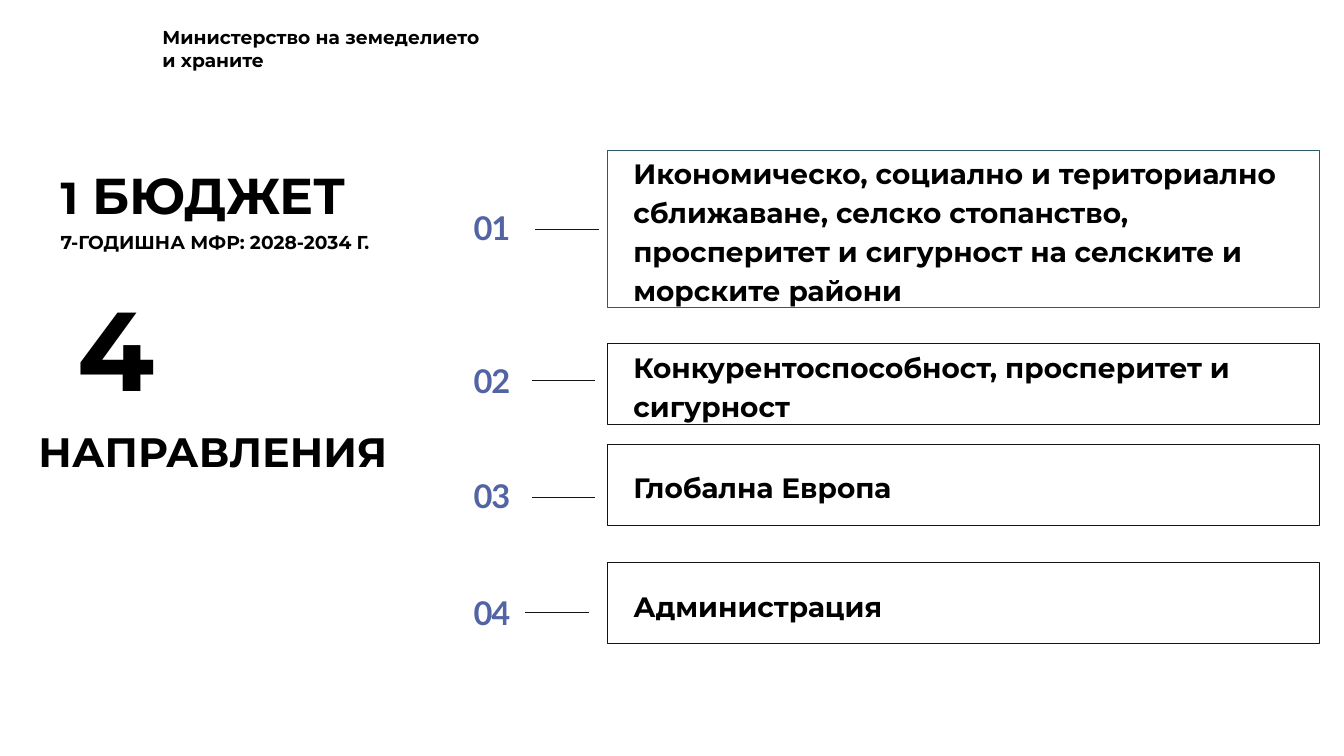
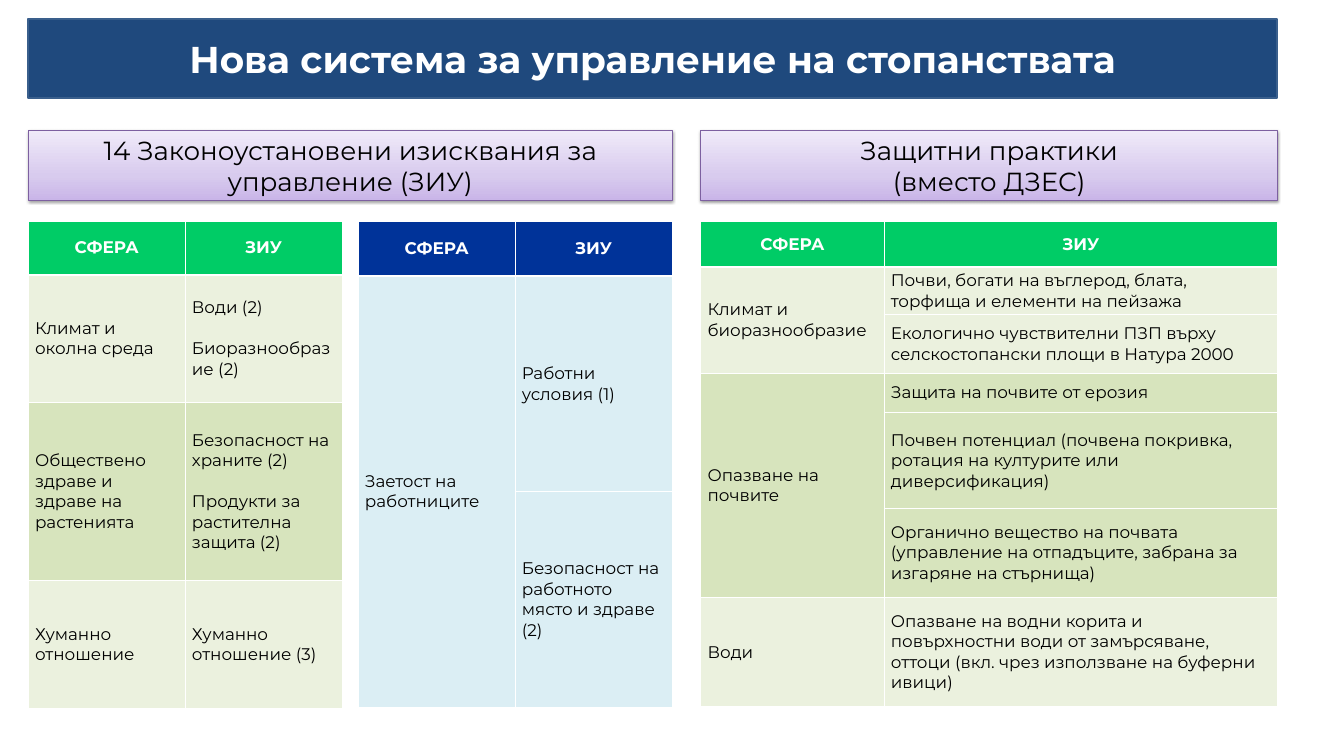
"""Builds two slides: the budget directions and the new farm management system."""
import copy

import lxml.etree
import pptx
import pptx.dml.color
import pptx.enum.shapes
import pptx.enum.text
import pptx.oxml.ns
import pptx.util

Cm, Pt, qn = pptx.util.Cm, pptx.util.Pt, pptx.oxml.ns.qn
RECT = pptx.enum.shapes.MSO_SHAPE.RECTANGLE
STRAIGHT = pptx.enum.shapes.MSO_CONNECTOR.STRAIGHT
CENTER = pptx.enum.text.PP_ALIGN.CENTER
LEFT = pptx.enum.text.PP_ALIGN.LEFT
MIDDLE = pptx.enum.text.MSO_ANCHOR.MIDDLE

FONT, NUMBER_FONT = "Montserrat", "Lato"
BLACK, WHITE, INK, TEAL, INDIGO = "000000", "FFFFFF", "141414", "2B5C6D", "5264A3"
NAVY, NAVY_EDGE, PURPLE = "1F497D", "3A5F8C", "7D60A0"
GREEN, BLUE, PALE, OLIVE, SKY = "00CC66", "003399", "EBF1DE", "D7E4BD", "DBEEF4"
LILAC_STOPS = [(0, "C9B5E8"), (0.35, "D8CBEE"), (1, "F0EAF9")]

MINISTRY = "Министерство на земеделието и храните"
MINISTRY_BOX = (5.89, 0.86, 12.83, 1.96)
HEADLINES = [
    ((2.29, 6.1, 14.17, 2.29), 67.5, [("1", 48), (" БЮДЖЕТ", 54)]),
    ((2.29, 8.74, 13.84, 0.86), 24, [("7-ГОДИШНА МФР: 2028-2034 Г.", 20)]),
    ((2.92, 10.57, 17.98, 5.08), 144, [("4", 120)]),
    ((1.45, 15.62, 17.98, 2.24), 66.6, [("НАПРАВЛЕНИЯ", 44)]),
]
FRAME_LEFT, FRAME_WIDTH, NUMBER_LEFT, DASH_WIDTH = 22.94, 26.92, 17.9, 2.4
DIRECTIONS = [
    {"text": "Икономическо, социално и териториално сближаване, селско стопанство, "
             "просперитет и сигурност на селските и морските райони",
     "top": 5.69, "height": 5.94, "color": TEAL, "number_top": 7.85, "dash": (20.24, 8.66)},
    {"text": "Конкурентоспособност, просперитет и сигурност",
     "top": 12.98, "height": 3.08, "color": INK, "number_top": 13.64, "dash": (20.1, 14.39)},
    {"text": "Глобална Европа",
     "top": 16.79, "height": 3.08, "color": INK, "number_top": 17.98, "dash": (20.1, 18.81)},
    {"text": "Администрация",
     "top": 21.26, "height": 3.08, "color": INK, "number_top": 22.4, "dash": (19.86, 23.15)},
]

TITLE = "Нова система за управление на стопанствата"
TITLE_BOX = (1.07, 0.71, 47.19, 3)
SECTION_TOP, SECTION_HEIGHT, TABLE_TOP = 4.93, 2.64, 8.36
SECTIONS = [
    (1.07, 24.33, ["14 Законоустановени изисквания за управление (ЗИУ)"]),
    (26.49, 21.79, ["Защитни практики", "(вместо ДЗЕС)"]),
]
HEADER = ["СФЕРА", "ЗИУ"]
TABLES = [
    {"left": 1.07, "cols": [5.93, 5.93], "header": (2.03, GREEN), "rows": [
        (4.83, PALE, "Климат и околна среда", ["Води (2)", "Биоразнообразие (2)"]),
        (6.73, OLIVE, "Обществено здраве и здраве на растенията",
         ["Безопасност на храните (2)", "Продукти за растителна защита (2)"]),
        (4.83, PALE, "Хуманно отношение", ["Хуманно отношение (3)"]),
    ]},
    {"left": 13.54, "cols": [5.93, 5.93], "header": (2.08, BLUE), "rows": [
        (8.15, SKY, "Заетост на работниците", ["Работни условия (1)"]),
        (8.15, SKY, None, ["Безопасност на работното място и здраве (2)"]),
    ]},
    {"left": 26.49, "cols": [6.93, 14.86], "header": (1.73, GREEN), "rows": [
        (1.7, PALE, "Климат и биоразнообразие",
         ["Почви, богати на въглерод, блата, торфища и елементи на пейзажа"]),
        (2.21, PALE, None,
         ["Екологично чувствителни ПЗП върху селскостопански площи в Натура 2000"]),
        (1.5, OLIVE, "Опазване на почвите", ["Защита на почвите от ерозия"]),
        (3.61, OLIVE, None,
         ["Почвен потенциал (почвена покривка, ротация на културите или диверсификация)"]),
        (3.38, OLIVE, None,
         ["Органично вещество на почвата (управление на отпадъците, "
          "забрана за изгаряне на стърнища)"]),
        (4.11, PALE, "Води",
         ["Опазване на водни корита и повърхностни води от замърсяване, оттоци "
          "(вкл. чрез използване на буферни ивици)"]),
    ]},
]


def rgb(color):
    return pptx.dml.color.RGBColor.from_string(color)


def cm(values):
    return [Cm(v) for v in values]


def put(obj, values):
    for name, value in values.items():
        setattr(obj, name, value)


def write(tf, lines, color=BLACK, bold=False, font=FONT, align=LEFT, spacing=None, gap=0):
    for i, runs in enumerate(lines):
        p = tf.add_paragraph() if i else tf.paragraphs[0]
        put(p, {"alignment": align, "space_before": Pt(gap if i else 0)})
        if spacing:
            p.line_spacing = Pt(spacing)
        for text, size in runs:
            r = p.add_run()
            r.text = text
            put(r.font, {"name": font, "size": Pt(size), "bold": bold})
            r.font.color.rgb = rgb(color)


def add_text(slide, box, lines, inset=True, wrap=True, **style):
    tf = slide.shapes.add_textbox(*cm(box)).text_frame
    tf.word_wrap = wrap
    if not inset:
        put(tf, dict.fromkeys(["margin_left", "margin_top", "margin_right", "margin_bottom"], 0))
    write(tf, lines, **style)
    return tf


def add_box(slide, box, line, width, fill=None):
    sp = slide.shapes.add_shape(RECT, *cm(box))
    sp.shadow.inherit = False
    if fill:
        sp.fill.solid()
        sp.fill.fore_color.rgb = rgb(fill)
    else:
        sp.fill.background()
    sp.line.color.rgb = rgb(line)
    sp.line.width = Pt(width)
    sp.text_frame.vertical_anchor = MIDDLE
    return sp


def add_dash(slide, x, y):
    line = slide.shapes.add_connector(STRAIGHT, *cm((x, y, x + DASH_WIDTH, y)))
    line.line.color.rgb = rgb(INK)
    line.line.width = Pt(0.75)
    lxml.etree.SubElement(line._element.spPr, qn("a:effectLst"))


def add_section(slide, left, width, lines):
    sp = add_box(slide, (left, SECTION_TOP, width, SECTION_HEIGHT), PURPLE, 0.75)
    sp.fill.gradient()
    sp.fill.gradient_angle = 90
    stops = sp._element.spPr.find(".//" + qn("a:gsLst"))
    stops.append(copy.deepcopy(stops[-1]))
    for stop, (position, color) in zip(sp.fill.gradient_stops, LILAC_STOPS):
        stop.position = position
        stop.color.rgb = rgb(color)
    effects = sp._element.spPr.find(qn("a:effectLst"))
    shadow = lxml.etree.SubElement(effects, qn("a:outerShdw"), blurRad=str(Pt(3.1)),
                                   dist=str(Pt(1.6)), dir="5400000", rotWithShape="0")
    tone = lxml.etree.SubElement(shadow, qn("a:srgbClr"), val=BLACK)
    lxml.etree.SubElement(tone, qn("a:alpha"), val="38000")
    write(sp.text_frame, [[(text, 28)] for text in lines], align=CENTER)


def fill_cell(cell, fill, lines, bottom=1, **style):
    tc_pr = cell._tc.get_or_add_tcPr()
    for side, width in (("L", 1), ("R", 1), ("T", 1), ("B", bottom)):
        ln = lxml.etree.SubElement(tc_pr, qn("a:ln" + side), w=str(Pt(width)))
        solid = lxml.etree.SubElement(ln, qn("a:solidFill"))
        lxml.etree.SubElement(solid, qn("a:srgbClr"), val=WHITE)
    cell.fill.solid()
    cell.fill.fore_color.rgb = rgb(fill)
    cell.vertical_anchor = MIDDLE
    write(cell.text_frame, [[(text, 18)] for text in lines], **style)


def add_grid(slide, spec):
    header_height, header_fill = spec["header"]
    heights = [header_height] + [row[0] for row in spec["rows"]]
    box = (spec["left"], TABLE_TOP, sum(spec["cols"]), sum(heights))
    table = slide.shapes.add_table(len(heights), len(HEADER), *cm(box)).table
    table.horz_banding = False
    for col, width in zip(table.columns, spec["cols"]):
        col.width = Cm(width)
    for row, height in zip(table.rows, heights):
        row.height = Cm(height)
    for c, text in enumerate(HEADER):
        fill_cell(table.cell(0, c), header_fill, [text], bottom=3,
                  color=WHITE, bold=True, align=CENTER)
    first = 1
    for r, (_, fill, area, rules) in enumerate(spec["rows"], 1):
        fill_cell(table.cell(r, 0), fill, [area] if area else [])
        fill_cell(table.cell(r, 1), fill, rules, gap=22)
        if area:
            first = r
        if r == len(spec["rows"]) or spec["rows"][r][2]:
            if r > first:
                table.cell(first, 0).merge(table.cell(r, 0))


def build_directions(slide):
    add_text(slide, MINISTRY_BOX, [[(MINISTRY, 20)]], bold=True)
    for box, spacing, runs in HEADLINES:
        add_text(slide, box, [runs], inset=False, bold=True, spacing=spacing)
    for number, d in enumerate(DIRECTIONS, 1):
        frame = add_box(slide, (FRAME_LEFT, d["top"], FRAME_WIDTH, d["height"]), d["color"], 0.75)
        put(frame.text_frame, {"margin_left": Cm(1), "margin_right": 0,
                               "margin_top": 0, "margin_bottom": 0})
        write(frame.text_frame, [[(d["text"], 30)]], bold=True, spacing=42)
        tf = add_text(slide, (NUMBER_LEFT, d["number_top"], 1.7, 1.52), [[(f"{number:02}", 35)]],
                      inset=False, wrap=False, color=INDIGO, bold=True,
                      font=NUMBER_FONT, spacing=42)
        tf.paragraphs[0].runs[0].font._element.set("spc", "-110")
        add_dash(slide, *d["dash"])


def build_system(slide):
    band = add_box(slide, TITLE_BOX, NAVY_EDGE, 2, NAVY)
    write(band.text_frame, [[(TITLE, 40)]], color=WHITE, bold=True, align=CENTER)
    for section in SECTIONS:
        add_section(slide, *section)
    for spec in TABLES:
        add_grid(slide, spec)


def main():
    prs = pptx.Presentation()
    put(prs, {"slide_width": Cm(50.8), "slide_height": Cm(28.58)})
    for build in (build_directions, build_system):
        build(prs.slides.add_slide(prs.slide_layouts[6]))
    prs.save("out.pptx")


if __name__ == "__main__":
    main()
